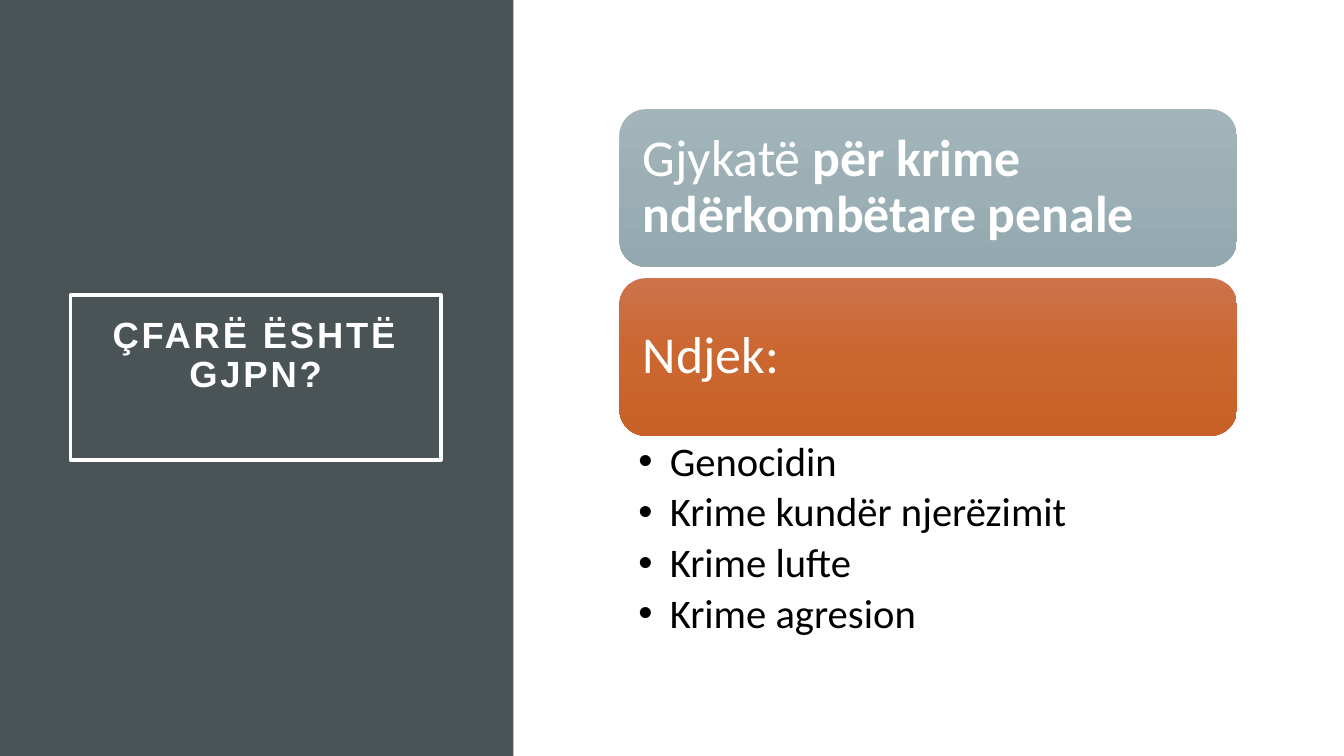
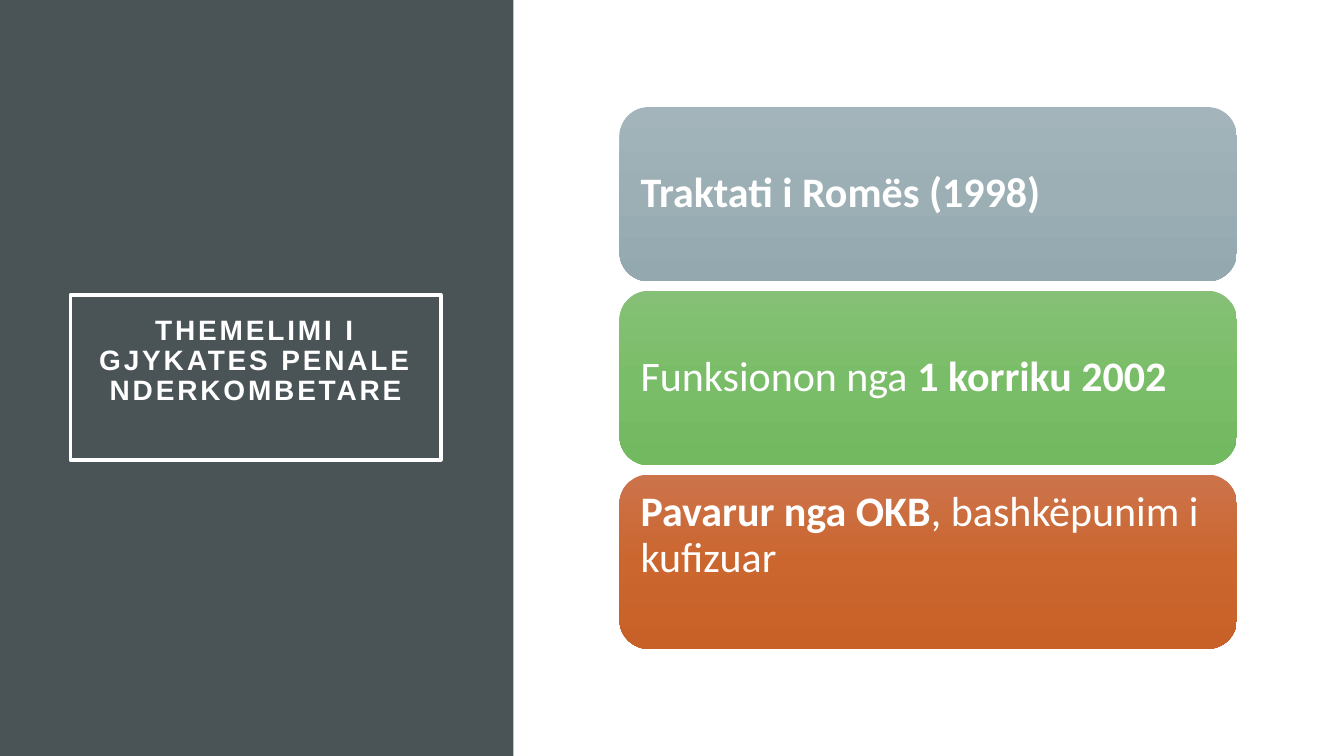
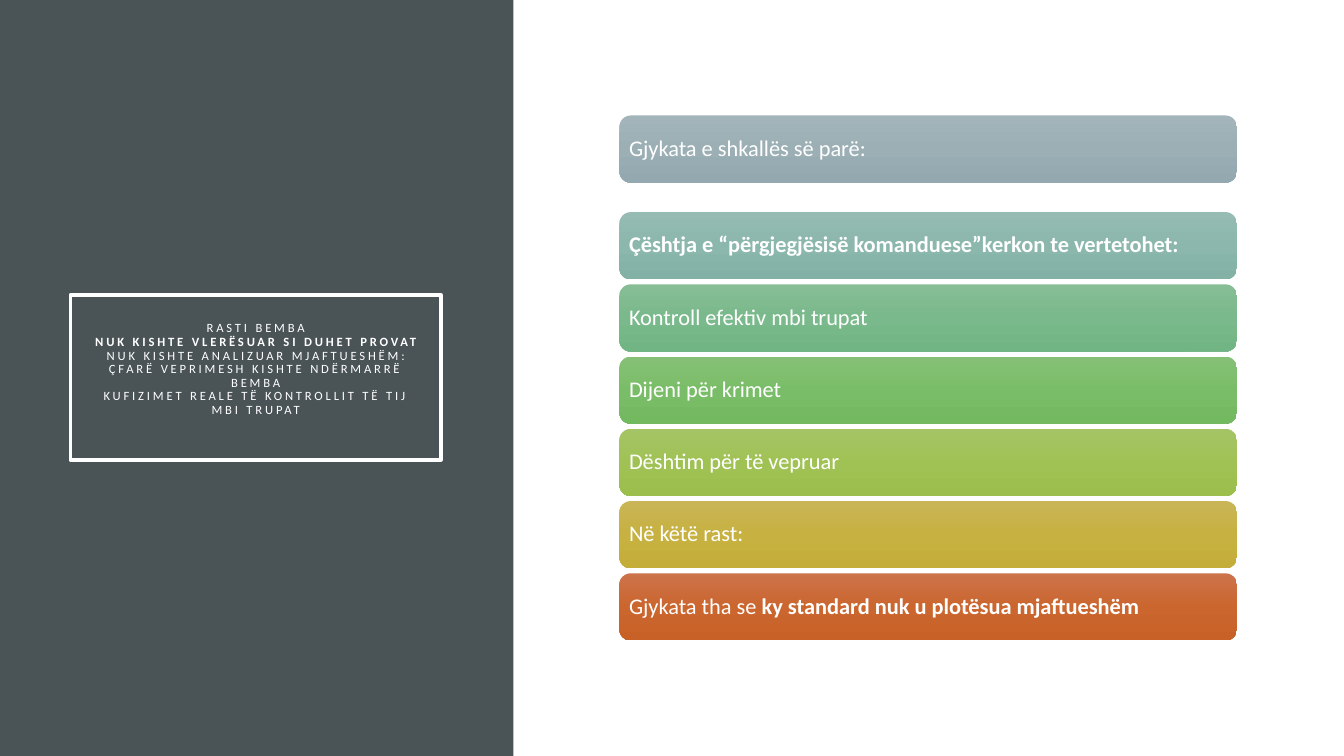
from copy import deepcopy
from dataclasses import dataclass

from lxml import etree
from pptx import Presentation
from pptx.dml.color import RGBColor
from pptx.enum.shapes import MSO_SHAPE
from pptx.enum.text import MSO_ANCHOR, PP_ALIGN
from pptx.oxml.ns import qn
from pptx.util import Emu, Pt

RECT = MSO_SHAPE.RECTANGLE
ROUNDED = MSO_SHAPE.ROUNDED_RECTANGLE
TOP, MIDDLE = MSO_ANCHOR.TOP, MSO_ANCHOR.MIDDLE
LEFT, CENTER = PP_ALIGN.LEFT, PP_ALIGN.CENTER

EMU_PER_PX = 9525
SLIDE_W, SLIDE_H = 1280, 720
PANEL_W = 489
BAR_LEFT, BAR_W = 590, 588
BULLET_INDENT = 30
LINE_SPACING = 0.9

WHITE, BLACK, SLATE = "FFFFFF", "000000", "4A5356"
GREY = ("A3B5BB", "9BAFB5", "93A9AF")
TEAL = ("95BBB2", "8BB7AC", "83B1A6")
SEA = ("86BD95", "7AB98B", "72B584")
GREEN = ("85C076", "7ABD68", "73B960")
LIME = ("A5C466", "A0C255", "9BBE4D")
GOLD = ("C9B557", "C7B141", "C4AD39")
RUST = ("CC734B", "CB662F", "C86128")


@dataclass(frozen=True)
class Span:
    text: str
    bold: bool = False


Line = tuple[Span, ...]


@dataclass(frozen=True)
class Style:
    size: int
    color: str = WHITE
    font: str = "Calibri"
    align: PP_ALIGN = LEFT
    tracking: int = 0


@dataclass(frozen=True)
class Title:
    lines: tuple[Line, ...]
    size: int
    font: str
    lift: int


@dataclass(frozen=True)
class Bar:
    spans: Line
    colors: tuple[str, str, str]
    lift: int = 0


@dataclass(frozen=True)
class Stack:
    top: int
    bottom: int
    bar_height: int
    size: int
    inset: int
    bars: tuple[Bar, ...]


@dataclass(frozen=True)
class Topic:
    title: Title
    stacks: tuple[Stack, ...]
    bullets: tuple[str, ...] = ()


def px(value: float) -> Emu:
    return Emu(round(value * EMU_PER_PX))


def rgb(value: str) -> RGBColor:
    return RGBColor.from_string(value)


def add_box(slide, kind, left: float, top: float, width: float, height: float):
    box = slide.shapes.add_shape(kind, px(left), px(top), px(width), px(height))
    box.shadow.inherit = False
    box.line.fill.background()
    return box


def set_gradient(box, colors: tuple[str, str, str]) -> None:
    box.fill.gradient()
    box.fill.gradient_angle = 270
    stops = box._element.spPr.find(qn("a:gradFill")).find(qn("a:gsLst"))
    stops.append(deepcopy(stops[0]))
    for stop, color, position in zip(box.fill.gradient_stops, colors, (0, 0.5, 1)):
        stop.color.rgb = rgb(color)
        stop.position = position


def set_frame(frame, anchor: MSO_ANCHOR, left: int, top: int, right: int, bottom: int) -> None:
    frame.word_wrap = True
    frame.vertical_anchor = anchor
    frame.margin_left, frame.margin_top = px(left), px(top)
    frame.margin_right, frame.margin_bottom = px(right), px(bottom)


def write_lines(frame, lines: tuple[Line, ...], style: Style) -> None:
    for index, spans in enumerate(lines):
        paragraph = frame.add_paragraph() if index else frame.paragraphs[0]
        paragraph.alignment = style.align
        paragraph.line_spacing = LINE_SPACING
        for span in spans:
            run = paragraph.add_run()
            run.text = span.text
            run.font.name = style.font
            run.font.size = Pt(style.size)
            run.font.bold = span.bold
            run.font.color.rgb = rgb(style.color)
            if style.tracking:
                run.font._element.set("spc", str(style.tracking * 100))


def draw_title(slide, title: Title) -> None:
    panel = add_box(slide, RECT, 0, 0, PANEL_W, SLIDE_H)
    panel.fill.solid()
    panel.fill.fore_color.rgb = rgb(SLATE)
    border = add_box(slide, RECT, 67, 281, 353, 157)
    border.fill.background()
    border.line.color.rgb = rgb(WHITE)
    border.line.width = Pt(2.5)
    set_frame(border.text_frame, MIDDLE, 19, 19, 19, 19 + title.lift)
    style = Style(title.size, font=title.font, align=CENTER, tracking=2)
    write_lines(border.text_frame, title.lines, style)


def draw_stack(slide, stack: Stack) -> None:
    steps = max(len(stack.bars) - 1, 1)
    pitch = (stack.bottom - stack.top - stack.bar_height) / steps
    for index, bar in enumerate(stack.bars):
        top = stack.top + index * pitch
        box = add_box(slide, ROUNDED, BAR_LEFT, top, BAR_W, stack.bar_height)
        set_gradient(box, bar.colors)
        inset = stack.inset
        set_frame(box.text_frame, MIDDLE, inset, inset, inset, inset + bar.lift)
        write_lines(box.text_frame, (bar.spans,), Style(stack.size))


def draw_bullets(slide, bullets: tuple[str, ...], top: int) -> None:
    box = slide.shapes.add_textbox(px(BAR_LEFT), px(top), px(BAR_W), px(201))
    set_frame(box.text_frame, TOP, 18, 5, 28, 5)
    lines = tuple((Span(text),) for text in bullets)
    write_lines(box.text_frame, lines, Style(29, BLACK))
    for paragraph in box.text_frame.paragraphs:
        paragraph.space_after = Pt(5)
        properties = paragraph._p.get_or_add_pPr()
        properties.set("marL", str(px(BULLET_INDENT)))
        properties.set("indent", str(px(-BULLET_INDENT)))
        etree.SubElement(properties, qn("a:buFont")).set("typeface", "Arial")
        etree.SubElement(properties, qn("a:buChar")).set("char", "•")


TOPICS = (
    Topic(
        Title(((Span("ÇFARË ËSHTË GJPN?", True),),), 26, "Arial", 40),
        (
            Stack(104, 415, 150, 37, 15, (
                Bar((Span("Gjykatë "), Span("për krime ndërkombëtare penale", True)), GREY),
                Bar((Span("Ndjek:"),), RUST),
            )),
        ),
        ("Genocidin", "Krime kundër njerëzimit", "Krime lufte", "Krime agresion"),
    ),
    Topic(
        Title(((Span("THEMELIMI I GJYKATES PENALE NDERKOMBETARE", True),),), 20, "Arial", 31),
        (
            Stack(102, 618, 166, 30, 12, (
                Bar((Span("Traktati i Romës (1998)", True),), GREY),
                Bar((Span("Funksionon nga "), Span("1 korriku 2002", True)), GREEN),
                Bar((Span("Pavarur nga OKB", True), Span(", bashkëpunim i kufizuar")), RUST, 49),
            )),
        ),
    ),
    Topic(
        Title(
            (
                (Span("RASTI BEMBA"),),
                (Span("NUK KISHTE VLERËSUAR SI DUHET PROVAT", True),),
                (Span("NUK KISHTE ANALIZUAR MJAFTUESHËM:"),),
                (Span("ÇFARË VEPRIMESH KISHTE NDËRMARRË BEMBA"),),
                (Span("KUFIZIMET REALE TË KONTROLLIT TË TIJ MBI TRUPAT"),),
            ),
            9, "Calibri", 15,
        ),
        (
            Stack(110, 174, 64, 16, 6, (
                Bar((Span("Gjykata e shkallës së parë:"),), GREY),
            )),
            Stack(202, 610, 64, 16, 6, (
                Bar((Span("Çështja e “përgjegjësisë komanduese”kerkon te vertetohet:", True),), TEAL),
                Bar((Span("Kontroll efektiv mbi trupat"),), SEA),
                Bar((Span("Dijeni për krimet"),), GREEN),
                Bar((Span("Dështim për të vepruar"),), LIME),
                Bar((Span("Në këtë rast:"),), GOLD),
                Bar((Span("Gjykata tha se "), Span("ky standard nuk u plotësua mjaftueshëm", True)), RUST),
            )),
        ),
    ),
)


def main() -> None:
    deck = Presentation()
    deck.slide_width, deck.slide_height = px(SLIDE_W), px(SLIDE_H)
    for topic in TOPICS:
        slide = deck.slides.add_slide(deck.slide_layouts[6])
        draw_title(slide, topic.title)
        for stack in topic.stacks:
            draw_stack(slide, stack)
        if topic.bullets:
            draw_bullets(slide, topic.bullets, topic.stacks[-1].bottom)
    deck.save("out.pptx")


if __name__ == "__main__":
    main()
